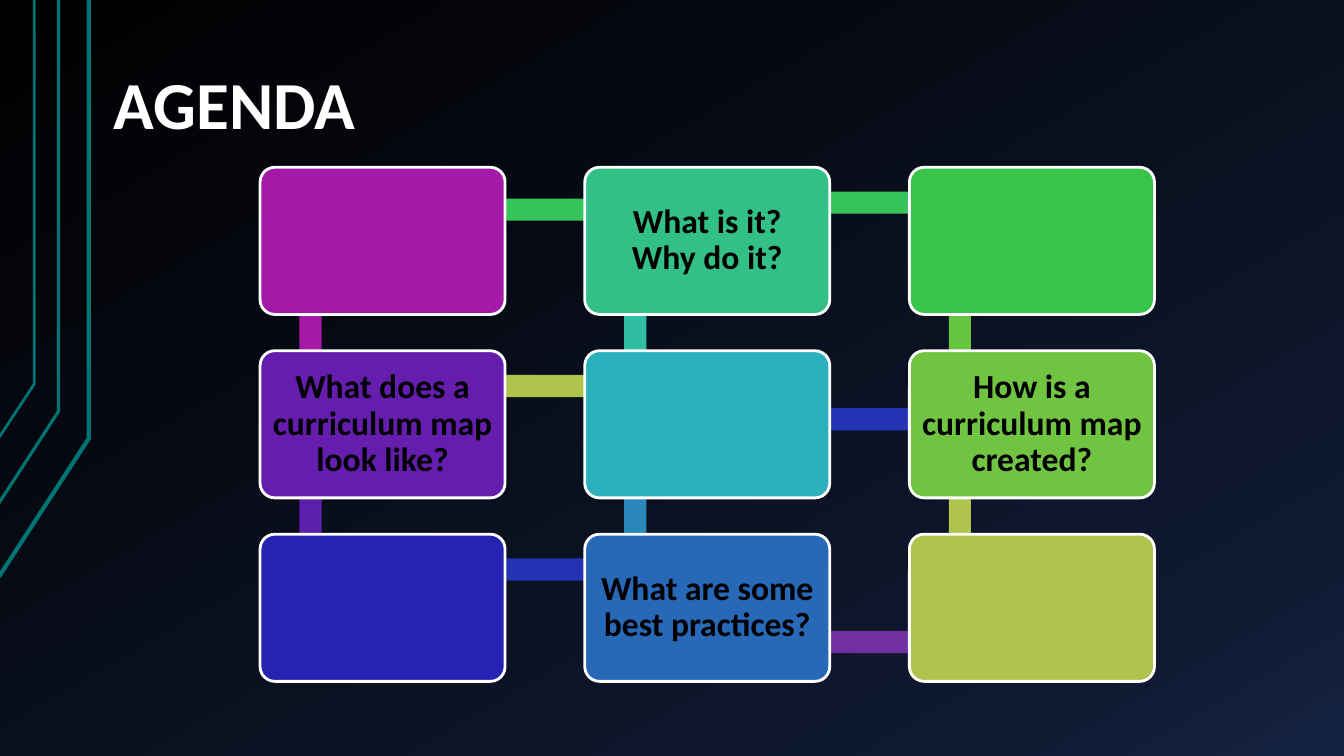
from copy import deepcopy
from dataclasses import dataclass
from pptx import Presentation
from pptx.dml.color import RGBColor
from pptx.enum.shapes import MSO_SHAPE
from pptx.enum.text import MSO_ANCHOR, PP_ALIGN
from pptx.oxml.ns import qn
from pptx.util import Inches, Pt


@dataclass(frozen=True)
class Theme:
    font: str = "Calibri"
    title_size: int = 48
    tile_size: int = 24
    white: str = "FFFFFF"
    black: str = "000000"
    teal: str = "007373"
    violet: str = "A419A7"
    indigo: str = "651DAD"
    grape: str = "5C1EAD"
    purple: str = "7030A0"
    navy: str = "2622B2"
    royal: str = "2333B3"
    blue: str = "2768B7"
    sky: str = "2987B9"
    cyan: str = "2CB1BC"
    aqua: str = "30BEA2"
    mint: str = "32C087"
    jade: str = "36C35A"
    green: str = "38C449"
    leaf: str = "66C440"
    lime: str = "70C442"
    olive: str = "AFC34D"
    backdrop: tuple = ((0, "000000"), (0.85, "0F1931"), (1, "142242"))


class Deck:
    def __init__(self, theme):
        self.theme = theme
        self.show = Presentation()
        self.show.slide_width = Inches(13.33)
        self.show.slide_height = Inches(7.5)
        self.slide = self.show.slides.add_slide(self.show.slide_layouts[5])

    def backdrop(self):
        fill = self.slide.background.fill
        fill.gradient()
        fill.gradient_angle = 300
        stops = self.slide.element.find(".//" + qn("a:gsLst"))
        stops.append(deepcopy(stops[0]))
        for stop, (place, color) in zip(fill.gradient_stops, self.theme.backdrop):
            stop.position = place
            stop.color.rgb = RGBColor.from_string(color)

    def label(self, frame, text, size, color, align, anchor, inset):
        frame.text = text
        frame.word_wrap = True
        frame.vertical_anchor = anchor
        frame.margin_left = frame.margin_right = Inches(inset[0])
        frame.margin_top = frame.margin_bottom = Inches(inset[1])
        for para in frame.paragraphs:
            para.alignment = align
            para.line_spacing = 0.9
            for run in para.runs:
                run.font.name = self.theme.font
                run.font.size = Pt(size)
                run.font.bold = True
                run.font.color.rgb = RGBColor.from_string(color)

    def title(self, text, left, top, width, height):
        box = self.slide.shapes.title
        box.left, box.top = Inches(left), Inches(top)
        box.width, box.height = Inches(width), Inches(height)
        self.label(box.text_frame, text, self.theme.title_size, self.theme.white,
                   PP_ALIGN.LEFT, MSO_ANCHOR.BOTTOM, (0.13, 0.07))

    def outline(self, points, weight):
        spots = [(Inches(x), Inches(y)) for x, y in points]
        pen = self.slide.shapes.build_freeform(*spots[0])
        pen.add_line_segments(spots[1:], close=False)
        shape = pen.convert_to_shape()
        shape.shadow.inherit = False
        shape.fill.background()
        shape.line.color.rgb = RGBColor.from_string(self.theme.teal)
        shape.line.width = Pt(weight)

    def block(self, kind, left, top, width, height, color):
        shape = self.slide.shapes.add_shape(
            kind, Inches(left), Inches(top), Inches(width), Inches(height))
        shape.shadow.inherit = False
        shape.fill.solid()
        shape.fill.fore_color.rgb = RGBColor.from_string(color)
        return shape

    def bar(self, left, top, width, height, color):
        shape = self.block(MSO_SHAPE.RECTANGLE, left, top, width, height, color)
        shape.line.fill.background()

    def tile(self, left, top, color, text):
        shape = self.block(MSO_SHAPE.ROUNDED_RECTANGLE, left, top, 2.43, 1.46, color)
        shape.adjustments[0] = 0.1
        shape.line.color.rgb = RGBColor.from_string(self.theme.white)
        shape.line.width = Pt(2)
        if text:
            self.label(shape.text_frame, text, self.theme.tile_size, self.theme.black,
                       PP_ALIGN.CENTER, MSO_ANCHOR.MIDDLE, (0.07, 0.07))


def main():
    theme = Theme()
    deck = Deck(theme)
    deck.backdrop()
    for edge, bend, end, weight in (
        (0.88, 4.35, 5.72, 3), (0.58, 4.08, 4.99, 2.25), (0.34, 3.81, 4.34, 2),
    ):
        deck.outline([(-0.01, end), (edge, bend), (edge, 0)], weight)
    deck.title("AGENDA", 1, 0.16, 11.33, 1.34)

    cols = [2.58 + 3.22 * i for i in range(3)]
    rows = [1.66 + 1.82 * i for i in range(3)]
    thick = 0.22

    for left, top, color in (
        (3.61, 3.72, theme.olive), (7.43, 6.26, theme.purple),
        (7.01, 4.05, theme.royal), (3.14, 1.97, theme.jade),
        (3.08, 5.54, theme.royal), (6.3, 1.9, theme.jade),
    ):
        deck.bar(left, top, 3.22, thick, color)

    links = (
        (theme.violet, theme.aqua, theme.leaf),
        (theme.grape, theme.sky, theme.olive),
    )
    for top, colors in zip(rows, links):
        for left, color in zip(cols, colors):
            deck.bar(left + 0.39, top + 0.36, thick, 1.81, color)

    tiles = (
        ((theme.violet, ""), (theme.mint, "What is it?\vWhy do it?"), (theme.green, "")),
        ((theme.indigo, "What does a curriculum map look like?"), (theme.cyan, ""),
         (theme.lime, "How is a curriculum map created?")),
        ((theme.navy, ""), (theme.blue, "What are some best practices?"),
         (theme.olive, "")),
    )
    for top, line in zip(rows, tiles):
        for left, (color, text) in zip(cols, line):
            deck.tile(left, top, color, text)
    deck.show.save("out.pptx")


if __name__ == "__main__":
    main()
